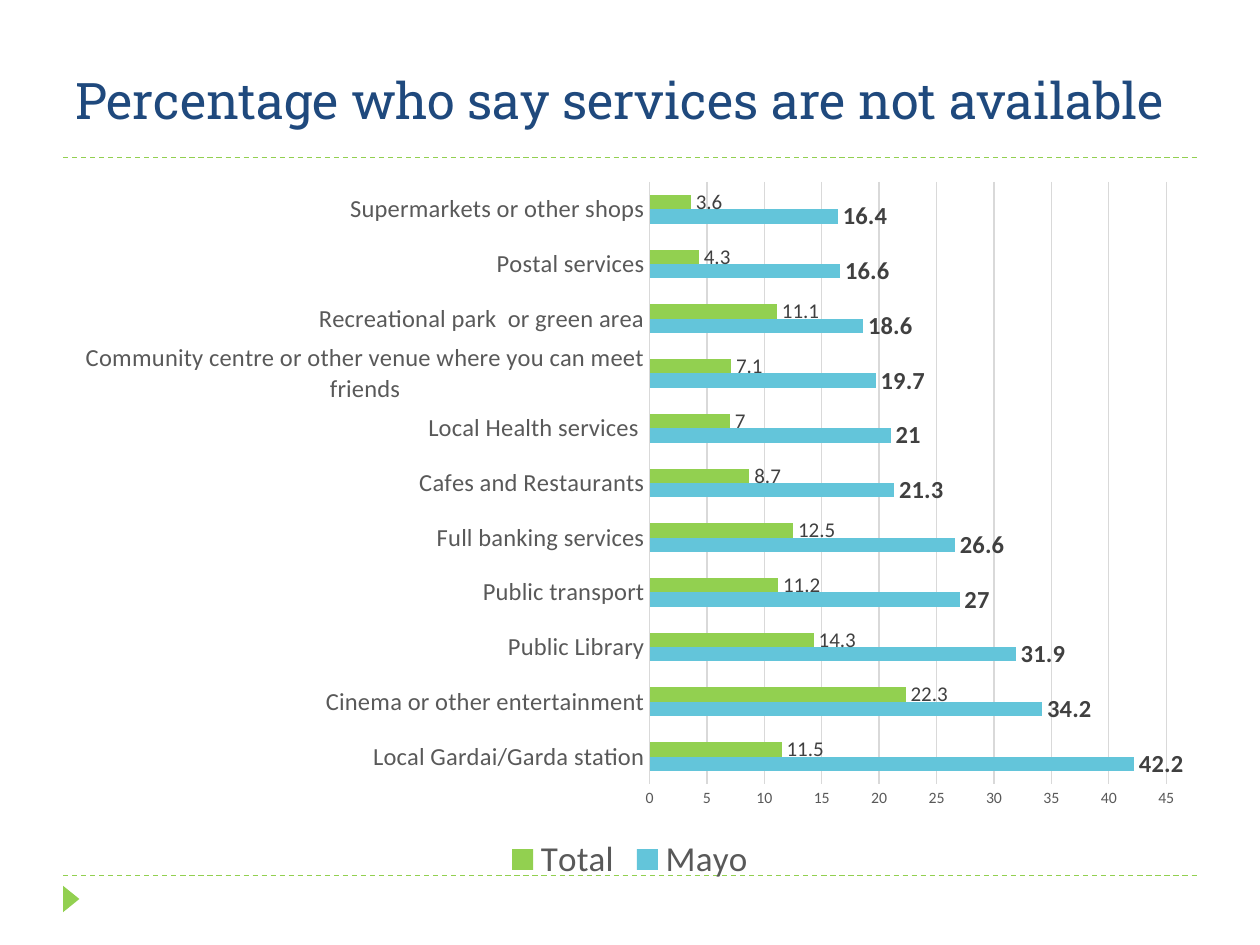
from lxml import etree
from pptx import Presentation
from pptx.chart.data import CategoryChartData
from pptx.dml.color import RGBColor
from pptx.enum.chart import XL_CHART_TYPE, XL_LABEL_POSITION, XL_LEGEND_POSITION, XL_TICK_MARK
from pptx.enum.dml import MSO_LINE
from pptx.enum.shapes import MSO_CONNECTOR, MSO_SHAPE
from pptx.enum.text import MSO_ANCHOR
from pptx.oxml.ns import qn
from pptx.util import Inches, Pt

BAR_CLUSTERED = XL_CHART_TYPE.BAR_CLUSTERED
OUTSIDE_END = XL_LABEL_POSITION.OUTSIDE_END
LEGEND_BOTTOM = XL_LEGEND_POSITION.BOTTOM
NO_TICK = XL_TICK_MARK.NONE
DASH = MSO_LINE.DASH
STRAIGHT = MSO_CONNECTOR.STRAIGHT
TRIANGLE = MSO_SHAPE.ISOSCELES_TRIANGLE
ANCHOR_BOTTOM = MSO_ANCHOR.BOTTOM

TITLE = "Percentage who say services are not available"
SERIES = ("Mayo", "Total")
SERVICES = [
    ("Local Gardai/Garda station", 42.2, 11.5),
    ("Cinema or other entertainment", 34.2, 22.3),
    ("Public Library", 31.9, 14.3),
    ("Public transport", 27, 11.2),
    ("Full banking services", 26.6, 12.5),
    ("Cafes and Restaurants", 21.3, 8.7),
    ("Local Health services ", 21, 7),
    ("Community centre or other venue where you can meet friends", 19.7, 7.1),
    ("Recreational park  or green area", 18.6, 11.1),
    ("Postal services", 16.6, 4.3),
    ("Supermarkets or other shops", 16.4, 3.6),
]
COLORS = {
    "title": "1F497D", "accent": "92D050", "Mayo": "63C5DA", "Total": "92D050",
    "axis": "595959", "label": "404040", "grid": "D9D9D9", "base": "000000",
}
LABEL_STYLES = {"Mayo": (14, True), "Total": (12, False)}
BODY_FONT, TITLE_FONT = "Calibri", "Roboto Slab"

WIDTH, HEIGHT = 10, 7.5
MARGIN = WIDTH * 0.05
CONTENT_WIDTH = WIDTH - 2 * MARGIN
RULES = (1.25, 6.95)


def color(name):
    return RGBColor.from_string(COLORS[name])


def style_font(font, size, color_name, name=BODY_FONT, bold=False):
    font.name, font.size, font.bold = name, Pt(size), bold
    font.color.rgb = color(color_name)


def style_line(line, color_name):
    line.color.rgb = color(color_name)
    line.width = Pt(0.75)


def add_rule(slide, y):
    rule = slide.shapes.add_connector(
        STRAIGHT, Inches(MARGIN), Inches(y), Inches(WIDTH - MARGIN), Inches(y))
    style_line(rule.line, "accent")
    rule.line.dash_style = DASH
    etree.SubElement(rule._element.spPr, qn("a:effectLst"))


def add_marker(slide):
    marker = slide.shapes.add_shape(
        TRIANGLE, Inches(0.46), Inches(7.07), Inches(0.21), Inches(0.13))
    marker.rotation = 90
    marker.shadow.inherit = False
    marker.fill.solid()
    marker.fill.fore_color.rgb = color("accent")
    marker.line.fill.background()


def add_title(slide):
    box = slide.shapes.add_textbox(
        Inches(MARGIN), Inches(0.17), Inches(CONTENT_WIDTH), Inches(0.91))
    frame = box.text_frame
    frame.word_wrap = True
    frame.vertical_anchor = ANCHOR_BOTTOM
    span = frame.paragraphs[0].add_run()
    span.text = TITLE
    style_font(span.font, 28.8, "title", TITLE_FONT)


def add_services_chart(slide):
    names, *columns = zip(*SERVICES)
    data = CategoryChartData()
    data.categories = names
    for name, values in zip(SERIES, columns):
        data.add_series(name, values)
    chart = slide.shapes.add_chart(
        BAR_CLUSTERED, Inches(MARGIN), Inches(1.33),
        Inches(CONTENT_WIDTH), Inches(5.72), data).chart
    chart.has_title = False
    style_font(chart.font, 10, "base")

    plot = chart.plots[0]
    plot.gap_width = 182
    plot.overlap = 0
    plot.vary_by_categories = False
    for series in plot.series:
        series.format.fill.solid()
        series.format.fill.fore_color.rgb = color(series.name)
        labels = series.data_labels
        labels.show_value = True
        labels.position = OUTSIDE_END
        size, bold = LABEL_STYLES[series.name]
        style_font(labels.font, size, "label", bold=bold)

    for axis, size in ((chart.category_axis, 14), (chart.value_axis, 9)):
        axis.major_tick_mark = axis.minor_tick_mark = NO_TICK
        style_font(axis.tick_labels.font, size, "axis")
    style_line(chart.category_axis.format.line, "grid")
    chart.value_axis.format.line.fill.background()
    style_line(chart.value_axis.major_gridlines.format.line, "grid")

    chart.has_legend = True
    chart.legend.position = LEGEND_BOTTOM
    chart.legend.include_in_layout = False
    style_font(chart.legend.font, 20, "axis")


def main():
    deck = Presentation()
    deck.slide_width, deck.slide_height = Inches(WIDTH), Inches(HEIGHT)
    slide = deck.slides.add_slide(deck.slide_layouts[6])
    for y in RULES:
        add_rule(slide, y)
    add_marker(slide)
    add_title(slide)
    add_services_chart(slide)
    deck.save("out.pptx")


if __name__ == "__main__":
    main()
